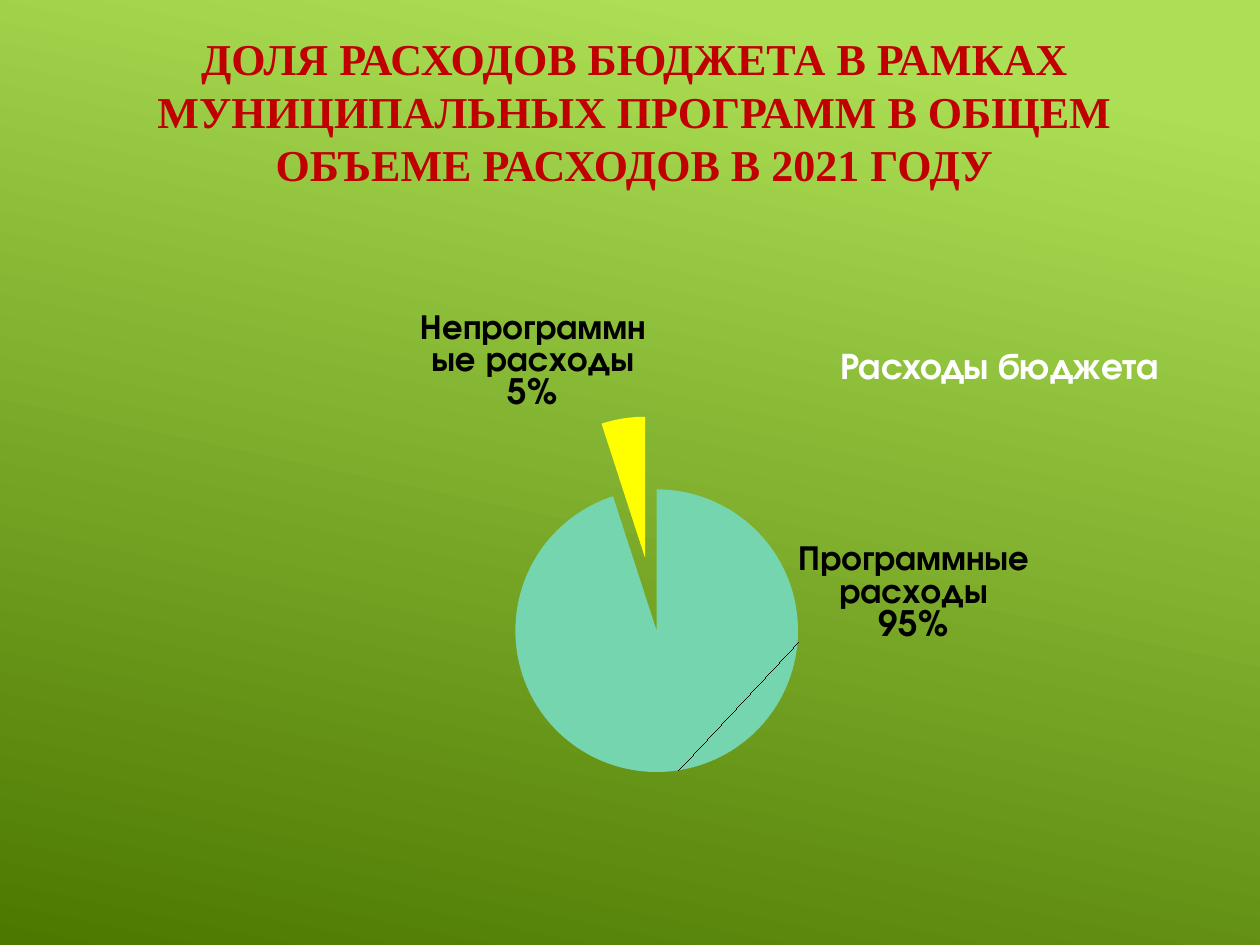
from copy import deepcopy

from lxml.etree import SubElement
from pptx import Presentation
from pptx.chart.data import CategoryChartData
from pptx.dml.color import RGBColor
from pptx.enum.chart import XL_CHART_TYPE, XL_LABEL_POSITION
from pptx.enum.text import MSO_ANCHOR, PP_ALIGN
from pptx.oxml import parse_xml
from pptx.oxml.ns import nsdecls, qn
from pptx.util import Pt

COLORS = {
    "light": "ACDF55",
    "dark": "4C7800",
    "heading": "C00000",
    "white": "FFFFFF",
    "black": "000000",
    "program": "75D5AE",
    "other": "FFFF00",
}
CHART_FONT = "TeX Gyre Adventor"


def color(name):
    """Return the named palette colour."""
    return RGBColor.from_string(COLORS[name])


def format_font(font, name, size, color_name, bold=False):
    """Set typeface, size, colour and weight of a font."""
    font.name = name
    font.size = Pt(size)
    font.bold = bold
    font.color.rgb = color(color_name)


def set_background(slide):
    """Fill the slide with the green gradient."""
    fill = slide.background.fill
    fill.gradient()
    fill.gradient_angle = 360 - 102
    stops = zip(fill.gradient_stops, (0.1, 1), ("light", "dark"))
    for stop, position, name in stops:
        stop.position = position
        stop.color.rgb = color(name)


def add_text(slide, text, left, top, width, height, **font_format):
    """Add a centred, wrapping text box."""
    shape = slide.shapes.add_textbox(Pt(left), Pt(top), Pt(width), Pt(height))
    frame = shape.text_frame
    frame.word_wrap = True
    frame.vertical_anchor = MSO_ANCHOR.MIDDLE
    paragraph = frame.paragraphs[0]
    paragraph.alignment = PP_ALIGN.CENTER
    run = paragraph.add_run()
    run.text = text
    format_font(run.font, **font_format)


def manual_layout(**values):
    """Build a chart layout element from fractions of the chart size."""
    items = "".join(f'<c:{tag} val="{value}"/>' for tag, value in values.items())
    return parse_xml(
        f"<c:layout {nsdecls('c')}><c:manualLayout>{items}</c:manualLayout></c:layout>"
    )


def add_title(chart, text):
    """Give the chart a title to the upper right of the pie."""
    chart.has_title = True
    title = chart.chart_title
    paragraph = title.text_frame.paragraphs[0]
    run = paragraph.add_run()
    run.text = text
    format_font(run.font, CHART_FONT, 21.3, "white", bold=True)
    element = title._element
    for layout in element.findall(qn("c:layout")):
        element.remove(layout)
    layout = manual_layout(xMode="edge", yMode="edge", x=0.66, y=0.21)
    element.find(qn("c:tx")).addnext(layout)
    title.include_in_layout = False


def place_plot(chart):
    """Place the pie inside the chart frame."""
    area = chart._chartSpace.chart.plotArea
    for layout in area.findall(qn("c:layout")):
        area.remove(layout)
    area.insert(0, manual_layout(layoutTarget="inner", xMode="edge", yMode="edge",
                                 x=0.39, y=0.42, w=0.24, h=0.4))


def add_labels(series, offsets):
    """Label slices with category above percentage, each moved by its offset."""
    labels = series.data_labels
    labels.show_value = False
    labels.show_category_name = True
    labels.show_percentage = True
    labels.number_format = "0%"
    labels.number_format_is_linked = False
    labels.position = XL_LABEL_POSITION.OUTSIDE_END
    format_font(labels.font, CHART_FONT, 20, "black", bold=True)
    element = labels._element
    separator = SubElement(element, qn("c:separator"))
    separator.text = "\n"
    element.find(qn("c:showBubbleSize")).addnext(separator)
    shared = [child for child in element if child.tag != qn("c:showLeaderLines")]
    for index, (x, y) in enumerate(offsets):
        label = parse_xml(f'<c:dLbl {nsdecls("c")}><c:idx val="{index}"/></c:dLbl>')
        label.append(manual_layout(x=x, y=y))
        label.extend(deepcopy(shared))
        element.insert(index, label)


def add_pie(slide, name, slices, left, top, width, height):
    """Add a pie of (category, value, colour, explosion, label offset) slices."""
    data = CategoryChartData()
    data.categories = [category for category, *_ in slices]
    data.add_series(name, [value for _, value, *_ in slices])
    chart = slide.shapes.add_chart(XL_CHART_TYPE.PIE, Pt(left), Pt(top),
                                   Pt(width), Pt(height), data).chart
    format_font(chart.font, CHART_FONT, 10, "white")
    chart.has_legend = False
    add_title(chart, name)
    place_plot(chart)
    plot = chart.plots[0]
    plot.vary_by_categories = True
    series = plot.series[0]
    add_labels(series, [offset for *_, offset in slices])
    for index, (_, _, color_name, explosion, _) in enumerate(slices):
        point = series.points[index]
        point.format.fill.solid()
        point.format.fill.fore_color.rgb = color(color_name)
        point.format.line.fill.background()
        if explosion:
            properties = series._element.findall(qn("c:dPt"))[index].find(qn("c:spPr"))
            properties.addprevious(
                parse_xml(f'<c:explosion {nsdecls("c")} val="{explosion}"/>')
            )


def main():
    """Build and save the slide."""
    presentation = Presentation()
    presentation.slide_width = Pt(720)
    presentation.slide_height = Pt(540)
    slide = presentation.slides.add_slide(presentation.slide_layouts[6])
    set_background(slide)
    add_text(
        slide,
        "ДОЛЯ РАСХОДОВ БЮДЖЕТА В РАМКАХ МУНИЦИПАЛЬНЫХ ПРОГРАММ "
        "В ОБЩЕМ ОБЪЕМЕ РАСХОДОВ В 2021 ГОДУ",
        31, 9.5, 663, 108,
        name="Times New Roman", size=25.2, color_name="heading", bold=True,
    )
    slices = [
        ("Программные расходы", 95, "program", 0, (0.1, -0.33)),
        ("Непрограммные расходы", 5, "other", 52, (0.02, 0)),
    ]
    add_pie(slide, "Расходы бюджета", slices, 31, 110, 675, 404)
    presentation.save("out.pptx")


if __name__ == "__main__":
    main()
